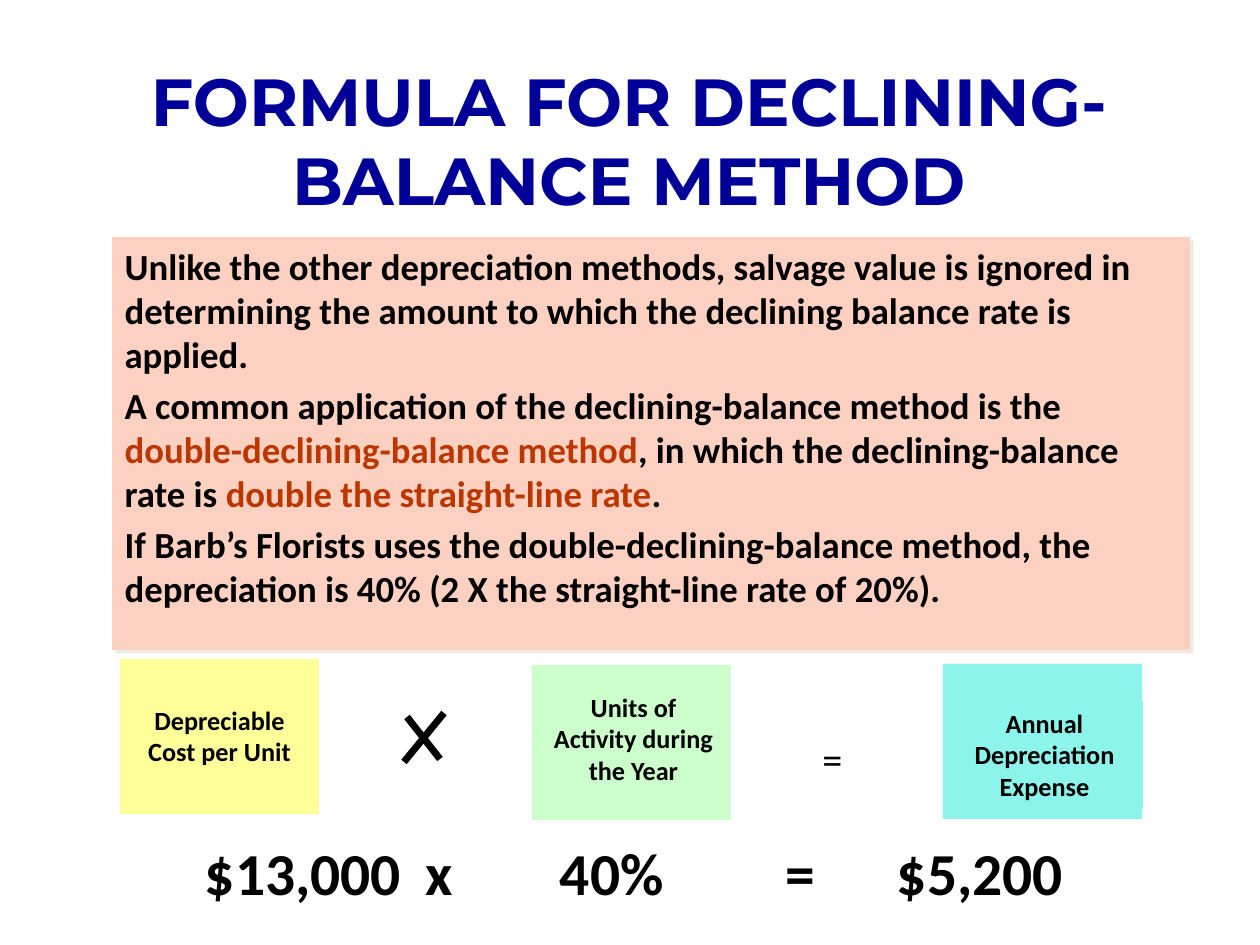
from lxml import etree
from pptx import Presentation
from pptx import util as u
from pptx.dml.color import RGBColor
from pptx.enum import shapes, text
from pptx.oxml import ns

PX = 914400 / 126
NAVY = RGBColor(0x00, 0x00, 0x99)
BLACK = RGBColor(0x00, 0x00, 0x00)
RUST = RGBColor(0xBC, 0x37, 0x00)
PEACH = RGBColor(0xFC, 0xD1, 0xC1)
YELLOW = RGBColor(0xFF, 0xFF, 0x99)
GREEN = RGBColor(0xCC, 0xFF, 0xCC)
AQUA = RGBColor(0x8C, 0xF4, 0xEA)
SHADOW = RGBColor(0xEE, 0xEC, 0xE1)

EXPLANATION = [
    [("Unlike the other depreciation methods, salvage value is ignored in determining "
      "the amount to which the declining balance rate is applied.", BLACK)],
    [("A common application of the declining-balance method is the ", BLACK),
     ("double-declining-balance method", RUST),
     (", in which the declining-balance rate is ", BLACK),
     ("double the straight-line rate", RUST),
     (".", BLACK)],
    [("If Barb’s Florists uses the double-declining-balance method, the depreciation "
      "is 40% (2 X the straight-line rate of 20%).", BLACK)],
]
TERMS = [
    ((120, 659), YELLOW, (135, 698, 169, 76), ["Depreciable", "Cost per Unit"]),
    ((532, 665), GREEN, (521, 685, 225, 112), ["Units of", "Activity during the Year"]),
    ((943, 664), AQUA, (946, 701, 197, 108), ["Annual Depreciation Expense"]),
]
TERM_SIZE = (199, 155)
TIMES_STROKES = [(404, 762, 444, 713), (407, 717, 440, 759)]
RESULT = ["$13,000", "x", "40%", "=", "$5,200"]
RESULT_TABS = [221, 355, 581, 692]


def px(length):
    return u.Emu(round(length * PX))


def place(shape, box):
    shape.left, shape.top, shape.width, shape.height = map(px, box)


def set_font(paragraph, size, color=BLACK, bold=True, name="Calibri"):
    font = paragraph.font
    font.name, font.size, font.bold = name, u.Pt(size), bold
    font.color.rgb = color


def add_child(parent, tag, **attributes):
    return etree.SubElement(parent, ns.qn(tag), attributes)


def set_title(slide):
    title = slide.shapes.title
    place(title, (112, 53, 1034, 173))
    title.text_frame.text = "FORMULA FOR DECLINING-BALANCE METHOD"
    title.text_frame.auto_size = text.MSO_AUTO_SIZE.NONE
    paragraph = title.text_frame.paragraphs[0]
    paragraph.alignment = text.PP_ALIGN.CENTER
    set_font(paragraph, 38, NAVY, name="Montserrat")


def set_explanation(slide):
    body = slide.placeholders[1]
    place(body, (112, 237, 1078, 413))
    body.fill.solid()
    body.fill.fore_color.rgb = PEACH
    effects = add_child(body._element.spPr, "a:effectLst")
    shadow = add_child(effects, "a:outerShdw", dist=str(u.Pt(2.8)), dir="2700000",
                       algn="ctr", rotWithShape="0")
    add_child(shadow, "a:srgbClr", val=str(SHADOW))
    frame = body.text_frame
    frame.auto_size = text.MSO_AUTO_SIZE.NONE
    for index, runs in enumerate(EXPLANATION):
        paragraph = frame.add_paragraph() if index else frame.paragraphs[0]
        properties = paragraph._p.get_or_add_pPr()
        properties.set("marL", "0")
        properties.set("indent", "0")
        add_child(properties, "a:buNone")
        paragraph.space_before = u.Pt(4 if index else 0)
        set_font(paragraph, 21)
        for words, color in runs:
            run = paragraph.add_run()
            run.text = words
            if color != BLACK:
                run.font.color.rgb = color


def add_rectangle(slide, box, color):
    shape = slide.shapes.add_shape(shapes.MSO_SHAPE.RECTANGLE, *map(px, box))
    shape.shadow.inherit = False
    shape.fill.solid()
    shape.fill.fore_color.rgb = color
    shape.line.fill.background()


def add_text(slide, box, lines, size, bold=True, alignment=text.PP_ALIGN.CENTER):
    frame = slide.shapes.add_textbox(*map(px, box)).text_frame
    frame.word_wrap = True
    for index, line in enumerate(lines):
        paragraph = frame.add_paragraph() if index else frame.paragraphs[0]
        paragraph.text = line
        paragraph.alignment = alignment
        set_font(paragraph, size, bold=bold)
    return frame


def add_term(slide, corner, color, caption_box, lines):
    add_rectangle(slide, corner + TERM_SIZE, color)
    add_rectangle(slide, caption_box, color) if color == AQUA else None
    add_text(slide, caption_box, lines, 15)


def add_stroke(slide, ends):
    line = slide.shapes.add_connector(shapes.MSO_CONNECTOR.STRAIGHT, *map(px, ends))
    line.line.color.rgb = BLACK
    line.line.width = u.Pt(4)
    add_child(line._element.spPr, "a:effectLst")


def add_result(slide):
    frame = slide.shapes.add_textbox(*map(px, (95, 830, 1076, 84))).text_frame
    frame.word_wrap = True
    frame.margin_left = px(110)
    paragraph = frame.paragraphs[0]
    paragraph.text = "\t".join(RESULT)
    paragraph.alignment = text.PP_ALIGN.LEFT
    tabs = add_child(paragraph._p.get_or_add_pPr(), "a:tabLst")
    for position in RESULT_TABS:
        add_child(tabs, "a:tab", pos=str(px(position)), algn="l")
    set_font(paragraph, 34)


def main():
    presentation = Presentation()
    presentation.slide_width, presentation.slide_height = u.Inches(10), u.Inches(7.5)
    slide = presentation.slides.add_slide(presentation.slide_layouts[1])
    set_title(slide)
    set_explanation(slide)
    for term in TERMS:
        add_term(slide, *term)
    for ends in TIMES_STROKES:
        add_stroke(slide, ends)
    add_result(slide)
    add_text(slide, (810, 728, 50, 60), ["="], 23, bold=False,
             alignment=text.PP_ALIGN.LEFT)
    presentation.save("out.pptx")


if __name__ == "__main__":
    main()
